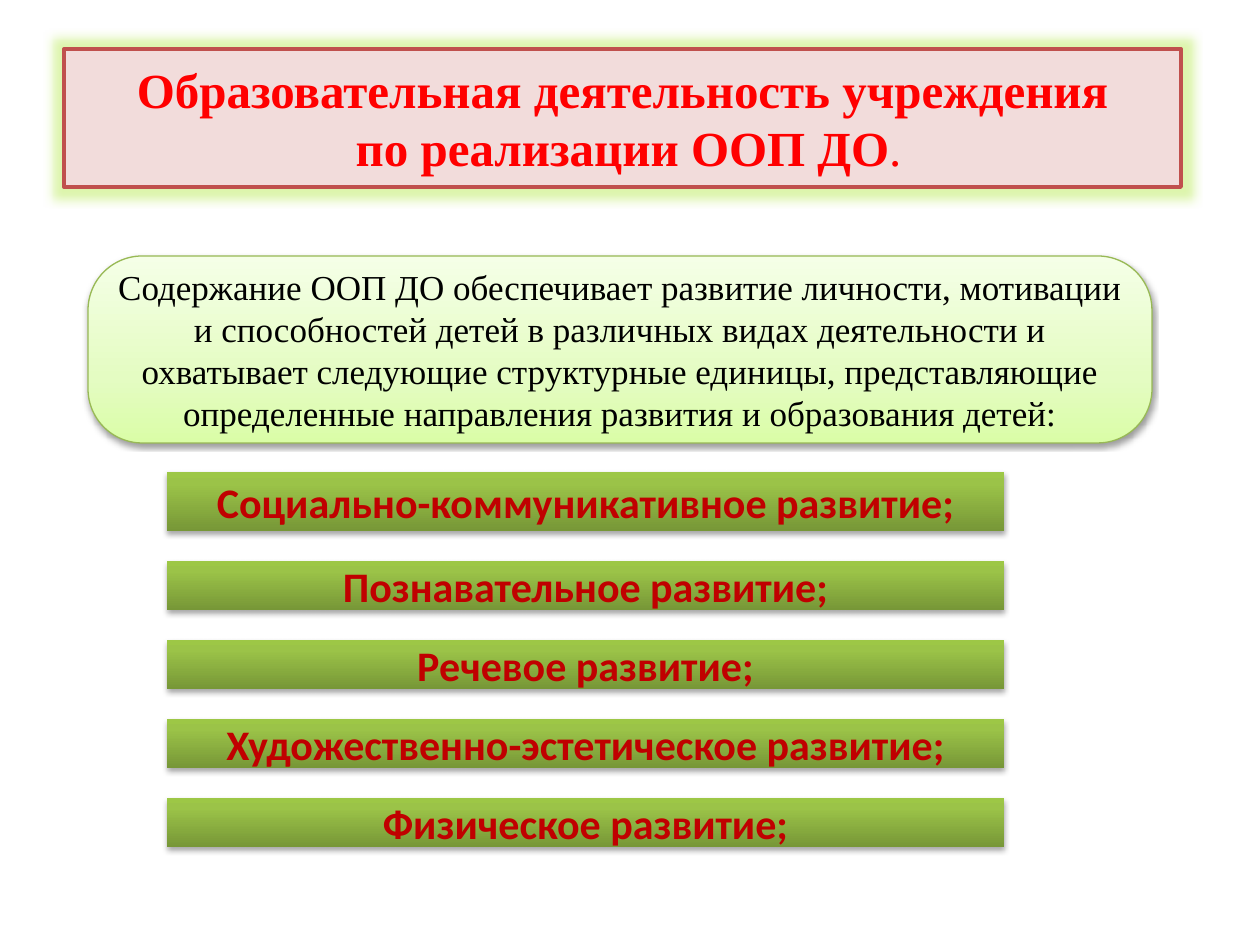
import lxml.etree
import pptx
import pptx.dml.color
import pptx.enum.shapes
import pptx.enum.text
import pptx.oxml
import pptx.oxml.ns
import pptx.util

PX = 914400 / 126
SHAPE = pptx.enum.shapes.MSO_SHAPE
NS = pptx.oxml.ns.nsdecls("a")


class Theme:
    serif, sans = "Times New Roman", "Calibri"
    title_size, body_size, bar_size = 28, 20, 24
    title_fill, title_line = "F2DCDB", "C0504D"
    title_text, title_outline, glow = "FF0000", "C00000", "AAE632"
    body_text, body_line = "000000", "98B955"
    bar_text, shadow = "C00000", "000000"
    body_stops = [(0, "DAFDA7"), (35, "E4FCC2"), (100, "F5FFE7")]
    bar_stops = [(0, "779737"), (80, "9BC348"), (100, "9DC746")]


TITLE = ["Образовательная деятельность учреждения", " по реализации ООП ДО"]
BODY = ("Содержание ООП ДО обеспечивает развитие личности, мотивации и способностей "
        "детей в различных видах деятельности и охватывает следующие структурные "
        "единицы, представляющие определенные направления развития и образования детей:")
AREAS = [
    "Социально-коммуникативное развитие;",
    "Познавательное развитие;",
    "Речевое развитие;",
    "Художественно-эстетическое развитие;",
    "Физическое развитие;",
]


def emu(px):
    return pptx.util.Emu(round(px * PX))


def rgb(value):
    return pptx.dml.color.RGBColor.from_string(value)


def add_box(s, kind, box):
    sp = s.shapes.add_shape(kind, *map(emu, box))
    sp.shadow.inherit = False
    tf = sp.text_frame
    tf.word_wrap = True
    tf.vertical_anchor = pptx.enum.text.MSO_ANCHOR.MIDDLE
    return sp


def style_paragraph(p, font, size, color, bold=False):
    p.alignment = pptx.enum.text.PP_ALIGN.CENTER
    p.font.name = font
    p.font.size = pptx.util.Pt(size)
    p.font.bold = bold
    p.font.color.rgb = rgb(color)


def set_line(sp, color, width):
    sp.line.color.rgb = rgb(color)
    sp.line.width = pptx.util.Pt(width)


def set_gradient(sp, stops):
    """Fill from bottom to top with (percent, colour) stops."""
    sp.fill.gradient()
    sp.fill.gradient_angle = 90
    items = "".join(f'<a:gs pos="{pos * 1000}"><a:srgbClr val="{color}"/></a:gs>'
                    for pos, color in stops)
    old = sp._element.spPr.find(".//" + pptx.oxml.ns.qn("a:gsLst"))
    old.getparent().replace(old, pptx.oxml.parse_xml(f"<a:gsLst {NS}>{items}</a:gsLst>"))


def add_effect(sp, tag, attrs, color, alpha):
    effects = sp._element.spPr.find(pptx.oxml.ns.qn("a:effectLst"))
    effects.append(pptx.oxml.parse_xml(
        f'<a:{tag} {NS} {attrs}><a:srgbClr val="{color}">'
        f'<a:alpha val="{alpha * 1000}"/></a:srgbClr></a:{tag}>'))


def add_shadow(sp, distance, alpha):
    attrs = f'blurRad="40000" dist="{distance}" dir="5400000" rotWithShape="0"'
    add_effect(sp, "outerShdw", attrs, Theme.shadow, alpha)


def add_outlined_run(p, text, bold):
    r = p.add_run()
    r.text = text
    r.font.bold = bold
    r.font._element.insert(0, pptx.oxml.parse_xml(
        f'<a:ln {NS} w="9525"><a:solidFill><a:srgbClr val="{Theme.title_outline}"/>'
        '</a:solidFill></a:ln>'))


def add_title(s, box):
    sp = add_box(s, SHAPE.FLOWCHART_PROCESS, box)
    sp.fill.solid()
    sp.fill.fore_color.rgb = rgb(Theme.title_fill)
    set_line(sp, Theme.title_line, 2.25)
    add_effect(sp, "glow", 'rad="139700"', Theme.glow, 40)
    p = sp.text_frame.paragraphs[0]
    style_paragraph(p, Theme.serif, Theme.title_size, Theme.title_text)
    first, second = TITLE
    add_outlined_run(p, first, True)
    p.add_line_break()
    add_outlined_run(p, second, True)
    add_outlined_run(p, ".", False)


def add_summary(s, box):
    sp = add_box(s, SHAPE.ROUNDED_RECTANGLE, box)
    sp.adjustments[0] = 0.29
    set_gradient(sp, Theme.body_stops)
    set_line(sp, Theme.body_line, 0.75)
    add_shadow(sp, 20000, 38)
    p = sp.text_frame.paragraphs[0]
    p.text = BODY
    style_paragraph(p, Theme.serif, Theme.body_size, Theme.body_text)


def add_areas(s, box):
    """Stack bars with evenly spaced bottoms; the first bar is taller."""
    left, top, width, height = box
    first_height, bar_height = 59, 49
    pitch = (height - first_height) // (len(AREAS) - 1)
    for i, area in enumerate(AREAS):
        h = bar_height if i else first_height
        bottom = top + first_height + i * pitch
        sp = add_box(s, SHAPE.RECTANGLE, (left, bottom - h, width, h))
        set_gradient(sp, Theme.bar_stops)
        sp.line.fill.background()
        add_shadow(sp, 23000, 35)
        p = sp.text_frame.paragraphs[0]
        p.text = area
        style_paragraph(p, Theme.sans, Theme.bar_size, Theme.bar_text, bold=True)


def main():
    prs = pptx.Presentation()
    prs.slide_width, prs.slide_height = emu(1260), emu(945)
    s = prs.slides.add_slide(prs.slide_layouts[6])
    add_title(s, (64, 49, 1117, 138))
    add_summary(s, (88, 256, 1064, 187))
    add_areas(s, (167, 472, 837, 375))
    prs.save("out.pptx")


if __name__ == "__main__":
    main()
